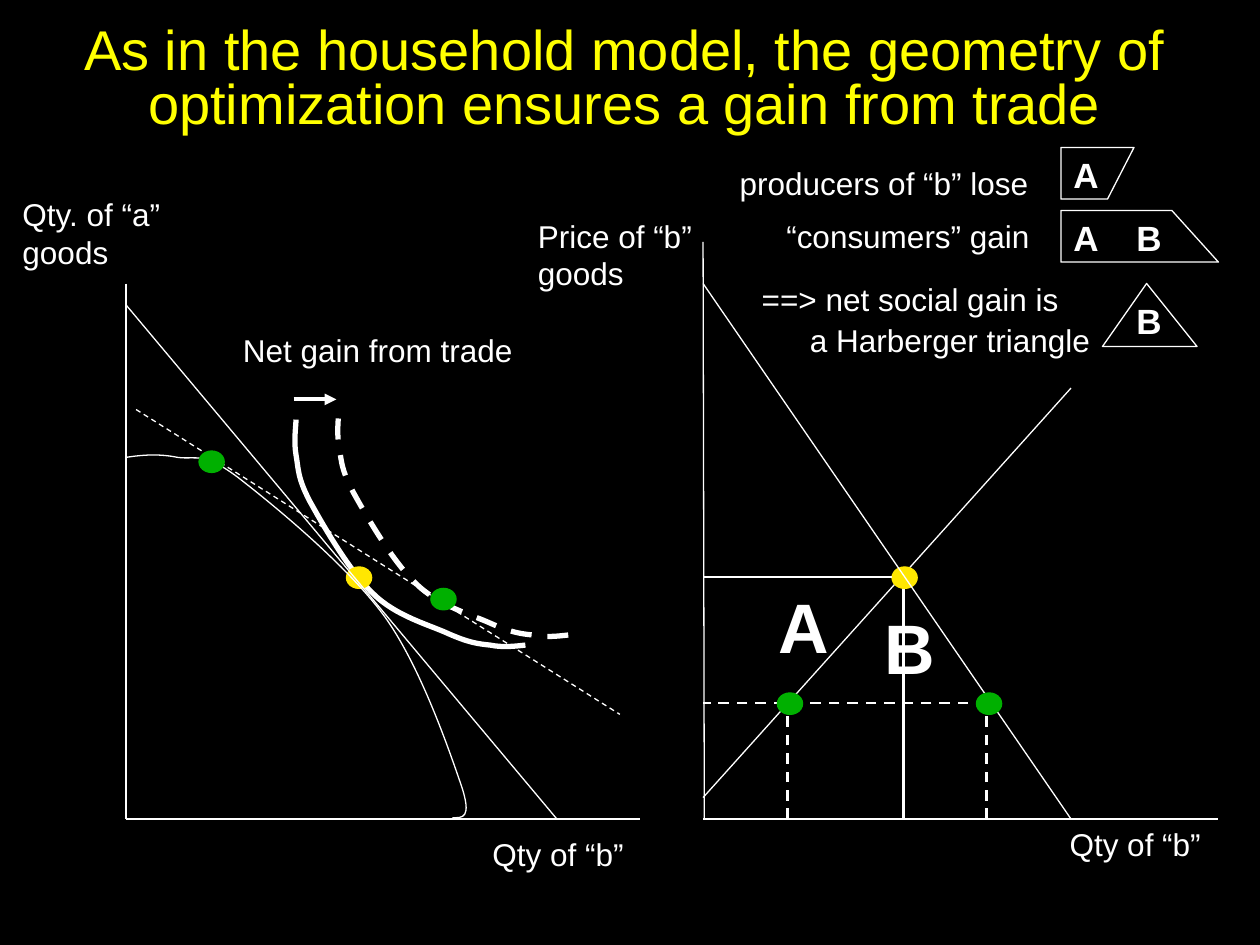
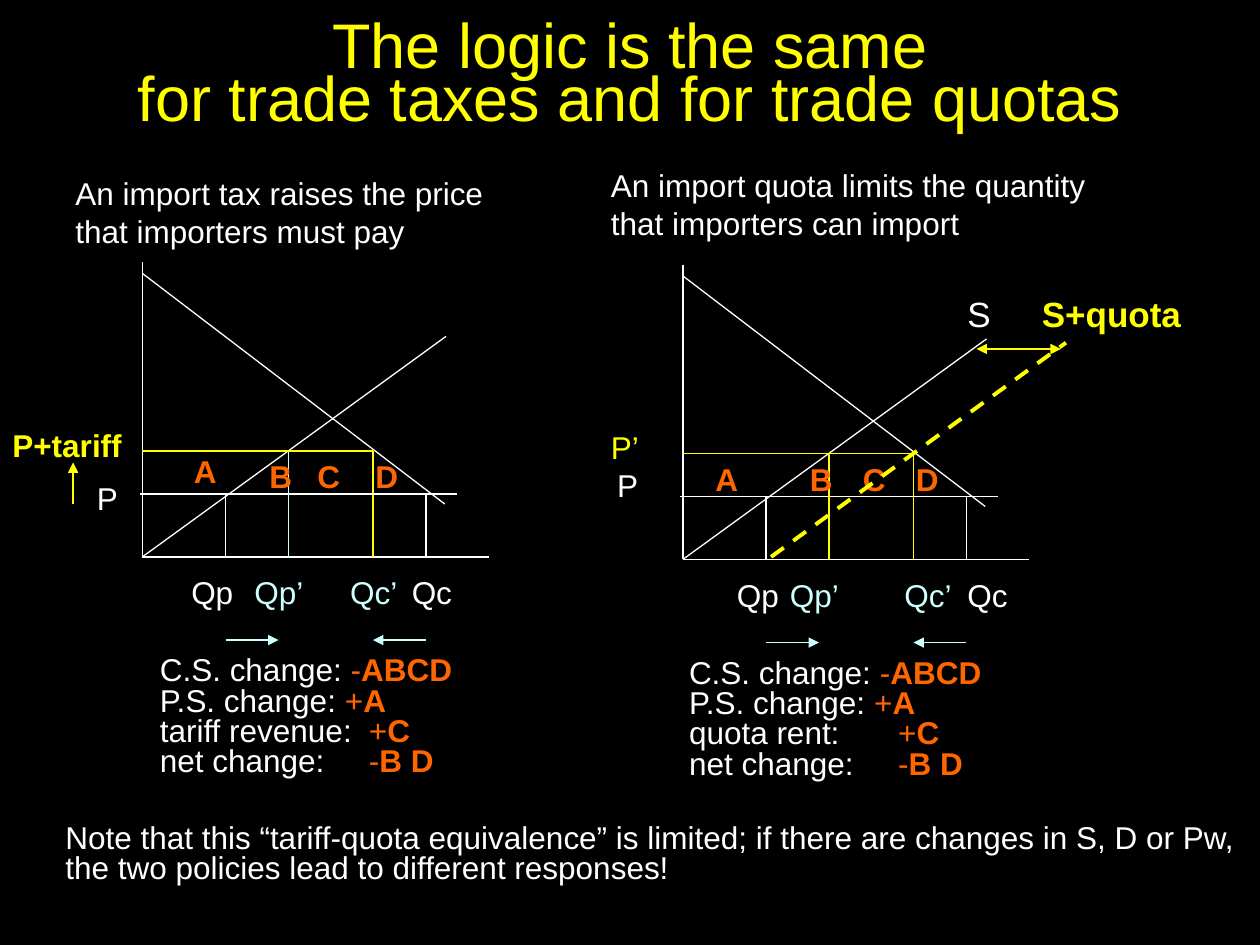
from copy import deepcopy
from lxml.etree import SubElement
from pptx import Presentation
from pptx.dml.color import RGBColor
from pptx.enum.dml import MSO_LINE
from pptx.enum.shapes import MSO_CONNECTOR, MSO_SHAPE
from pptx.enum.text import MSO_ANCHOR, MSO_AUTO_SIZE, PP_ALIGN
from pptx.oxml.ns import qn
from pptx.util import Inches, Pt

FONT = "Arial"
BLACK, WHITE, YELLOW = "000000", "FFFFFF", "FFFF00"
GOLD, GREEN, ORANGE, ICE = "FFE701", "00B000", "FF6600", "CCFFFF"
DASHED = {"dash": True}
RIGHT = {"align": PP_ALIGN.RIGHT}

GAIN_TITLE = "As in the household model, the geometry of optimization ensures a gain from trade"
INDIFFERENCE = [
    (4.17, 5.12), (4.08, 5.13), (3.99, 5.14), (3.89, 5.12), (3.79, 5.11), (3.72, 5.1),
    (3.56, 5.03), (3.41, 4.96), (3.14, 4.89), (2.96, 4.71), (2.77, 4.53), (2.56, 4.16),
    (2.46, 3.98), (2.36, 3.79), (2.37, 3.72), (2.35, 3.61), (2.33, 3.5), (2.35, 3.38),
    (2.35, 3.33),
]
TRADE_SHIFT = (0.34, -0.08)
FRONTIER = [
    (1, 3.63), (1.13, 3.61), (1.26, 3.6), (1.41, 3.63), (1.56, 3.65), (1.61, 3.58),
    (1.89, 3.79), (2.16, 4), (2.75, 4.48), (3.05, 4.89), (3.34, 5.29), (3.57, 5.97),
    (3.66, 6.23), (3.75, 6.5), (3.67, 6.49), (3.59, 6.49),
]
BACK_LINES = [
    ((1, 2.25), (1, 6.5), {}),
    ((1, 6.5), (5.08, 6.5), {}),
    ((5.58, 1.92), (5.59, 6.5), {}),
    ((5.58, 6.5), (9.67, 6.5), {}),
    ((7.17, 6.5), (7.17, 4.58), {"width": 1.5}),
    ((5.58, 6.33), (8.5, 3.08), {}),
]
FRONT_LINES = [
    ((1, 2.42), (4.42, 6.5), {}),
    ((5.58, 2.25), (8.5, 6.5), {}),
    ((1.08, 3.25), (4.92, 5.67), DASHED),
    ((7.83, 5.58), (5.58, 5.58), {"width": 1.5, **DASHED}),
    ((7.83, 6.5), (7.83, 5.58), {"width": 1.5, **DASHED}),
    ((6.25, 6.5), (6.25, 5.58), {"width": 1.5, **DASHED}),
    ((7.08, 4.58), (5.58, 4.58), {"width": 1.5}),
    ((2.33, 3.17), (2.67, 3.17), {"width": 2.25, "tail": True}),
]
CLOSED_ECONOMY_DOTS = [(2.75, 4.5), (7.08, 4.5)]
TRADE_DOTS = [(3.42, 4.67), (1.58, 3.58), (7.75, 5.5), (6.17, 5.5)]
KEY_SHAPES = [
    [(8.42, 1.58), (8.79, 1.58), (9, 1.17), (8.42, 1.17)],
    [(8.42, 2.08), (9.67, 2.08), (9.3, 1.67), (8.42, 1.67)],
    [(8.75, 2.75), (9.5, 2.75), (9.1, 2.25)],
]
GAIN_LABELS = [
    ("Qty. of “a” goods", (0.08, 1.5, 1.58, 0.9), {}),
    ("Price of “b” goods", (4.17, 1.67, 1.58, 0.9), {}),
    ("Qty of “b”", (3.81, 6.58, 1.61, 0.5), {}),
    ("Qty of “b”", (8.39, 6.5, 1.61, 0.5), {}),
    ("Net gain from trade", (1.83, 2.58, 2.92, 0.46), {}),
    ("producers of “b” lose ", (4.58, 1.25, 3.75, 0.4), RIGHT),
    ("“consumers” gain ", (5.67, 1.67, 2.67, 0.4), RIGHT),
    ("==> net social gain is", (5.67, 2.17, 2.83, 0.4), RIGHT),
    ("a Harberger triangle", (5.92, 2.5, 2.83, 0.4), RIGHT),
]
AREA_LETTERS = [
    ("A", 6.08, 4.58, 40), ("B", 6.92, 4.75, 40), ("A", 8.42, 1.17, 20),
    ("A", 8.42, 1.67, 20), ("B", 8.92, 1.67, 20), ("B", 8.92, 2.33, 20),
]

POLICY_TITLE = "The logic is the same\vfor trade taxes and for trade quotas"
POLICY_NOTE = (
    "Note that this “tariff-quota equivalence” is limited; if there are changes in S, D or Pw, "
    "the two policies lead to different responses!"
)
PANEL_LINES = [
    ((1.13, 2.08), (1.13, 4.42), {}),
    ((1.13, 4.42), (3.88, 4.42), {}),
    ((1.13, 4.42), (3.54, 2.67), {}),
    ((1.13, 2.17), (3.53, 4), {}),
    ((2.29, 3.58), (2.96, 3.58), {"color": YELLOW}),
    ((2.96, 3.58), (2.96, 4.42), {"color": YELLOW}),
    ((1.11, 3.92), (3.63, 3.92), {}),
    ((2.29, 3.58), (1.13, 3.58), {"color": YELLOW}),
    ((1.79, 3.92), (1.79, 4.42), {}),
    ((3.38, 3.92), (3.38, 4.42), {}),
    ((1.79, 5.08), (2.21, 5.08), {"color": ICE, "tail": True}),
    ((3.38, 5.08), (2.96, 5.08), {"color": ICE, "tail": True}),
]
PANELS = [
    {
        "shift": (0, 0),
        "output_line": ICE,
        "revenue": "tariff revenue:\t",
        "account_left": 1.17,
        "areas": {"A": (1.44, 3.54), "B": (2.04, 3.58), "C": (2.42, 3.58), "D": (2.88, 3.58)},
        "quantities": {"Qp": 1.42, "Qp’": 1.92, "Qc’": 2.68, "Qc": 3.17},
        "labels": [
            ("An import tax raises the price that importers must pay", (0.5, 1.33, 3.75, 0.71), {}),
            ("P", (0.67, 3.75, 0.37, 0.4), {}),
            ("P+tariff", (0, 3.33, 1.08, 0.4), {"color": YELLOW, "bold": True, "wrap": False}),
        ],
        "lines": [((0.58, 3.67), (0.58, 4), {"color": YELLOW, "head": True})],
    },
    {
        "shift": (4.29, 0.02),
        "output_line": YELLOW,
        "revenue": "quota rent:\t",
        "account_left": 5.37,
        "areas": {"A": (5.58, 3.6), "B": (6.33, 3.6), "C": (6.75, 3.6), "D": (7.17, 3.6)},
        "quantities": {"Qp": 5.75, "Qp’": 6.17, "Qc’": 7.08, "Qc": 7.58},
        "labels": [
            ("An import quota limits the quantity\nthat importers can import",
             (4.75, 1.27, 4, 0.71), {"wrap": False}),
            ("P", (4.8, 3.65, 0.37, 0.4), {}),
            ("P’", (4.75, 3.35, 0.43, 0.4), {"color": YELLOW}),
            ("S+quota", (8.17, 2.27, 2.08, 0.43), {"color": YELLOW, "size": 20, "bold": True}),
            ("S", (7.58, 2.27, 2.08, 0.43), {"size": 20}),
        ],
        "lines": [
            ((6.12, 4.42), (8.46, 2.72), {"color": YELLOW, "width": 2.25, **DASHED}),
            ((7.75, 2.77), (8.42, 2.77), {"color": YELLOW, "head": True, "tail": True}),
        ],
    },
]


def rgb(color):
    return RGBColor.from_string(color)


def shifted(point, shift):
    return point[0] + shift[0], point[1] + shift[1]


def add_span(para, words, color, size, bold):
    span = para.add_run()
    span.text = words
    span.font.name = FONT
    span.font.size = Pt(size)
    span.font.bold = bold
    span.font.color.rgb = rgb(color)
    return span


def write(frame, text, color=WHITE, size=18, bold=False, align=PP_ALIGN.LEFT, spacing=None,
          wrap=True, anchor=MSO_ANCHOR.TOP, tab=None):
    frame.word_wrap = wrap
    frame.auto_size = MSO_AUTO_SIZE.NONE
    frame.vertical_anchor = anchor
    rows = [[(row, color, bold)] for row in text.split("\n")] if isinstance(text, str) else text
    for index, row in enumerate(rows):
        para = frame.paragraphs[0] if index == 0 else frame.add_paragraph()
        para.alignment = align
        if spacing:
            para.line_spacing = spacing
        if tab:
            stops = SubElement(para._p.get_or_add_pPr(), qn("a:tabLst"))
            SubElement(stops, qn("a:tab"), pos=str(Inches(tab)), algn="l")
        for words, span_color, span_bold in row:
            first, *others = words.split("\v")
            span = add_span(para, first, span_color, size, span_bold)
            for line in others:
                para.add_line_break()
                para._p[-1].append(deepcopy(span._r.rPr))
                add_span(para, line, span_color, size, span_bold)


def place_text(page, text, at, **style):
    box = page.shapes.add_textbox(*map(Inches, at))
    write(box.text_frame, text, **style)


def add_page(deck, title, at, **style):
    page = deck.slides.add_slide(deck.slide_layouts[5])
    box = page.shapes.title
    box.left, box.top, box.width, box.height = map(Inches, at)
    write(box.text_frame, title, color=YELLOW, align=PP_ALIGN.CENTER, **style)
    return page


def set_line(line, color=WHITE, width=0.75, dash=False):
    line.color.rgb = rgb(color)
    line.width = Pt(width)
    if dash:
        line.dash_style = MSO_LINE.DASH


def draw_line(page, start, end, head=False, tail=False, **style):
    line = page.shapes.add_connector(MSO_CONNECTOR.STRAIGHT, *map(Inches, start + end))
    set_line(line.line, **style)
    for shown, tag in ((head, "a:headEnd"), (tail, "a:tailEnd")):
        if shown:
            SubElement(line.line._get_or_add_ln(), qn(tag), type="triangle")
    SubElement(line._element.spPr, qn("a:effectLst"))


def draw_lines(page, lines, shift=(0, 0)):
    for start, end, style in lines:
        draw_line(page, shifted(start, shift), shifted(end, shift), **style)


def draw_outline(page, points, close=False, **style):
    corners = [(Inches(x), Inches(y)) for x, y in points]
    builder = page.shapes.build_freeform(*corners[0])
    builder.add_line_segments(corners[1:], close=close)
    shape = builder.convert_to_shape()
    shape.fill.background()
    shape.shadow.inherit = False
    set_line(shape.line, **style)
    return shape


def draw_curve(page, controls, **style):
    shape = draw_outline(page, controls, **style)
    outline = next(shape._element.iter(qn("a:path")))
    segments = outline.findall(qn("a:lnTo"))
    for first in range(0, len(segments), 3):
        curve = SubElement(outline, qn("a:cubicBezTo"))
        for segment in segments[first:first + 3]:
            curve.append(segment[0])
            outline.remove(segment)


def draw_dots(page, places, color):
    for left, top in places:
        dot = page.shapes.add_shape(MSO_SHAPE.OVAL, *map(Inches, (left, top, 0.2, 0.17)))
        dot.shadow.inherit = False
        dot.fill.solid()
        dot.fill.fore_color.rgb = rgb(color)
        set_line(dot.line, color)


def build_gain_page(deck):
    page = add_page(deck, GAIN_TITLE, (0, 0.17, 9.92, 0.96), size=32, spacing=0.8)
    draw_curve(page, INDIFFERENCE, width=3)
    draw_lines(page, BACK_LINES)
    draw_dots(page, CLOSED_ECONOMY_DOTS, GOLD)
    draw_curve(page, FRONTIER)
    draw_lines(page, FRONT_LINES)
    trade_curve = [shifted(point, TRADE_SHIFT) for point in INDIFFERENCE]
    draw_curve(page, trade_curve, width=3, dash=True)
    draw_dots(page, TRADE_DOTS, GREEN)
    for corners in KEY_SHAPES:
        draw_outline(page, corners, close=True)
    for text, at, style in GAIN_LABELS:
        place_text(page, text, at, **style)
    for letter, left, top, size in AREA_LETTERS:
        height = 0.7 if size == 40 else 0.44
        place_text(page, letter, (left, top, 0.5, height), size=size, bold=True)


def build_panel(page, panel):
    shift = panel["shift"]
    draw_lines(page, PANEL_LINES, shift)
    draw_lines(page, [((2.29, 3.58), (2.29, 4.42), {"color": panel["output_line"]})], shift)
    for letter, (left, top) in panel["areas"].items():
        place_text(page, letter, (left, top, 0.38, 0.4), color=ORANGE, bold=True)
    for name, left in panel["quantities"].items():
        new = name.endswith("’")
        place_text(page, name, (left, 4.5 + shift[1], 0.71 if new else 0.6, 0.5),
                   color=ICE if new else WHITE)
    for text, at, style in panel["labels"]:
        place_text(page, text, at, **style)
    account = [
        ("C.S. change: ", "-", "ABCD"),
        ("P.S. change: ", "+", "A"),
        (panel["revenue"], "+", "C"),
        ("net change:\t", "-", "B D"),
    ]
    rows = [[(name, WHITE, False), (sign, ORANGE, False), (areas, ORANGE, True)]
            for name, sign, areas in account]
    place_text(page, rows, (panel["account_left"], 5.17 + shift[1], 2.81, 1.38),
               spacing=0.8, tab=1.66)
    draw_lines(page, panel["lines"])


def build_policy_page(deck):
    page = add_page(deck, POLICY_TITLE, (0, 0, 10, 1.25), size=36, spacing=0.7,
                    anchor=MSO_ANCHOR.MIDDLE)
    for panel in PANELS:
        build_panel(page, panel)
    place_text(page, POLICY_NOTE, (0.42, 6.5, 9.58, 0.74), spacing=0.8)


def main():
    deck = Presentation()
    deck.slide_width, deck.slide_height = Inches(10), Inches(7.5)
    backdrop = deck.slide_master.background.fill
    backdrop.solid()
    backdrop.fore_color.rgb = rgb(BLACK)
    build_gain_page(deck)
    build_policy_page(deck)
    deck.save("out.pptx")


if __name__ == "__main__":
    main()
